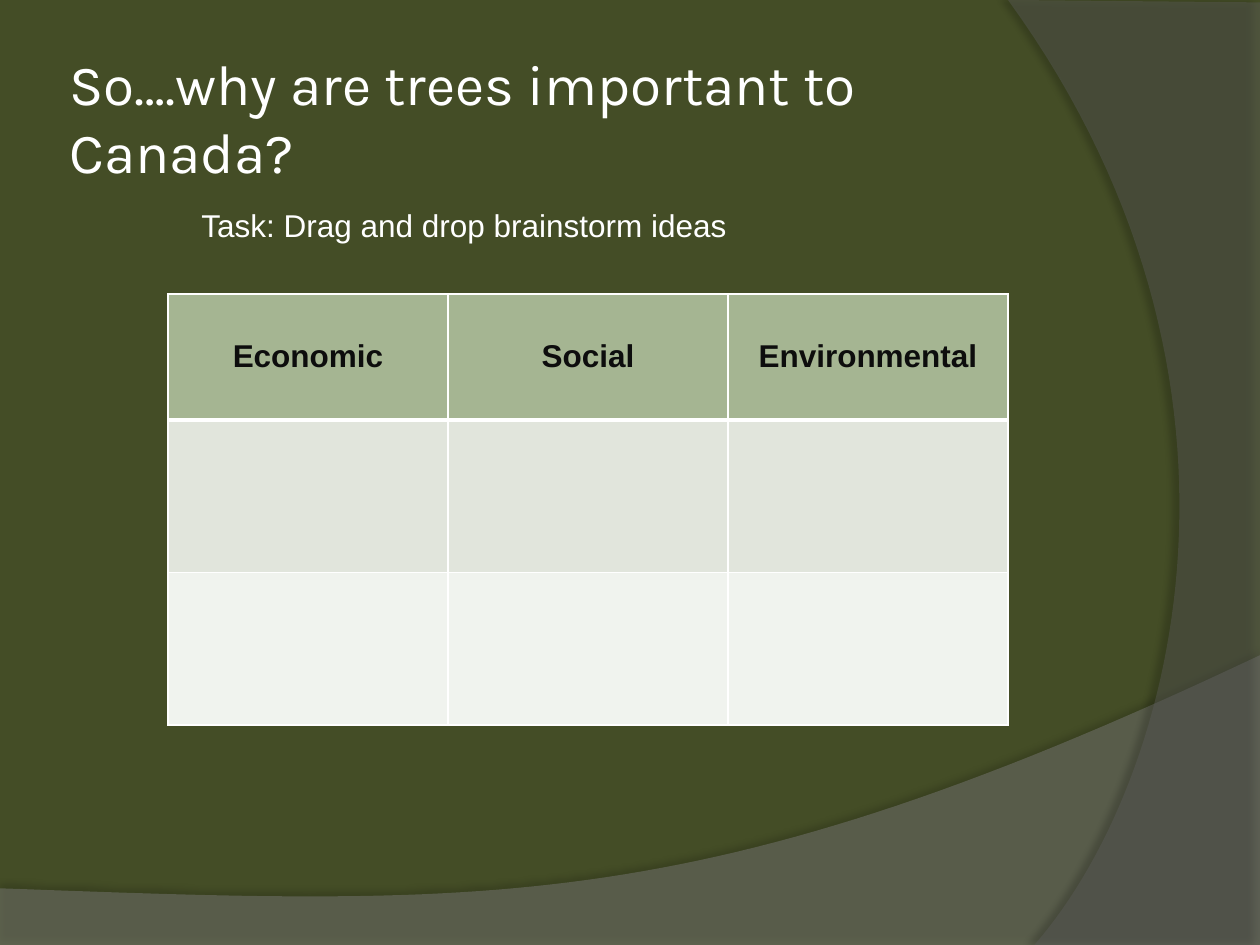
"""Build a slide about the importance of trees with a three-column sorting table."""
import dataclasses

import lxml.etree
import pptx
import pptx.dml.color
import pptx.enum.text
import pptx.oxml.ns
import pptx.slide
import pptx.util

Pt = pptx.util.Pt
RGBColor = pptx.dml.color.RGBColor
qn = pptx.oxml.ns.qn

BACKGROUND = RGBColor(0x44, 0x4D, 0x26)
BOTTOM_WAVE = RGBColor(0x7F, 0x7F, 0x7F)
SIDE_WAVE = RGBColor(0x5E, 0x5E, 0x5E)
WHITE = RGBColor(0xFF, 0xFF, 0xFF)
BLACK = RGBColor(0, 0, 0)
HEADER_TEXT = RGBColor(0x0D, 0x0D, 0x0D)
ROW_FILLS = [
    RGBColor(0xA5, 0xB5, 0x92),
    RGBColor(0xE1, 0xE5, 0xDC),
    RGBColor(0xF0, 0xF3, 0xEE),
]


def add_element(parent, tag, **attributes):
    values = {name: str(value) for name, value in attributes.items()}
    return lxml.etree.SubElement(parent, qn(tag), values)


def curve(start, control_1, control_2, end, steps=60):
    points = []
    for step in range(1, steps + 1):
        t = step / steps
        weights = ((1 - t) ** 3, 3 * t * (1 - t) ** 2, 3 * t**2 * (1 - t), t**3)
        corners = (start, control_1, control_2, end)
        points.append(tuple(
            sum(weight * corner[axis] for weight, corner in zip(weights, corners))
            for axis in (0, 1)
        ))
    return points


@dataclasses.dataclass
class SlideBuilder:
    slide: pptx.slide.Slide
    title_font: str = "Karla"
    body_font: str = "Arial"
    body_size: float = 18

    def style(self, text_frame, font_name, size, color, bold=False):
        for paragraph in text_frame.paragraphs:
            for run in paragraph.runs:
                run.font.name = font_name
                run.font.size = Pt(size)
                run.font.bold = bold
                run.font.color.rgb = color

    def background(self, color):
        self.slide.background.fill.solid()
        self.slide.background.fill.fore_color.rgb = color

    def wave(self, points, color, opacity, shadow_opacity, distance, direction):
        outline = [(Pt(x), Pt(y)) for x, y in points]
        builder = self.slide.shapes.build_freeform(*outline[0])
        builder.add_line_segments(outline[1:], close=True)
        shape = builder.convert_to_shape()
        shape.fill.solid()
        shape.fill.fore_color.rgb = color
        shape.line.fill.background()
        shape.shadow.inherit = False
        properties = shape.element.spPr
        fill_color = properties.find(qn("a:solidFill"))[0]
        add_element(fill_color, "a:alpha", val=opacity * 1000)
        shadow = add_element(
            properties.find(qn("a:effectLst")), "a:outerShdw", blurRad=Pt(4),
            dist=Pt(distance), dir=direction * 60000, algn="ctr", rotWithShape=0,
        )
        shadow_color = add_element(shadow, "a:srgbClr", val=BLACK)
        add_element(shadow_color, "a:alpha", val=shadow_opacity * 1000)

    def title(self, text, left, top, width, height):
        title = self.slide.shapes.title
        title.left, title.top = Pt(left), Pt(top)
        title.width, title.height = Pt(width), Pt(height)
        frame = title.text_frame
        frame.text = text
        frame.word_wrap = True
        frame.auto_size = pptx.enum.text.MSO_AUTO_SIZE.NONE
        frame.vertical_anchor = pptx.enum.text.MSO_ANCHOR.MIDDLE
        frame.margin_left = frame.margin_right = Pt(3.6)
        frame.margin_top = frame.margin_bottom = Pt(3.6)
        frame.paragraphs[0].alignment = pptx.enum.text.PP_ALIGN.LEFT
        self.style(frame, self.title_font, 32.4, WHITE)
        title.element.getparent().append(title.element)

    def table(self, rows, left, top, column_width, row_heights):
        columns = len(rows[0])
        table = self.slide.shapes.add_table(
            len(rows), columns, Pt(left), Pt(top),
            Pt(column_width * columns), Pt(sum(row_heights)),
        ).table
        table.horz_banding = False
        for column in table.columns:
            column.width = Pt(column_width)
        for row_index, texts in enumerate(rows):
            table.rows[row_index].height = Pt(row_heights[row_index])
            for column_index, text in enumerate(texts):
                self.cell(table.cell(row_index, column_index), text, row_index)

    def cell(self, cell, text, row_index):
        cell.fill.solid()
        cell.fill.fore_color.rgb = ROW_FILLS[row_index]
        if text:
            cell.text_frame.text = text
            cell.vertical_anchor = pptx.enum.text.MSO_ANCHOR.MIDDLE
            cell.text_frame.paragraphs[0].alignment = pptx.enum.text.PP_ALIGN.CENTER
            self.style(cell.text_frame, self.body_font, self.body_size, HEADER_TEXT, True)
        widths = {
            "a:lnL": 1,
            "a:lnR": 1,
            "a:lnT": 3 if row_index == 1 else 1,
            "a:lnB": 3 if row_index == 0 else 1,
        }
        properties = cell._tc.get_or_add_tcPr()
        for position, (tag, width) in enumerate(widths.items()):
            border = add_element(properties, tag, w=Pt(width))
            add_element(add_element(border, "a:solidFill"), "a:srgbClr", val=WHITE)
            properties.insert(position, border)

    def label(self, text, left, top, width, height):
        box = self.slide.shapes.add_textbox(Pt(left), Pt(top), Pt(width), Pt(height))
        frame = box.text_frame
        frame.text = text
        frame.word_wrap = False
        frame.auto_size = pptx.enum.text.MSO_AUTO_SIZE.SHAPE_TO_FIT_TEXT
        self.style(frame, self.body_font, self.body_size, WHITE)


presentation = pptx.Presentation()
presentation.slide_width, presentation.slide_height = Pt(720), Pt(540)
builder = SlideBuilder(presentation.slides.add_slide(presentation.slide_layouts[5]))
builder.background(BACKGROUND)
builder.wave(
    [(0, 507.6), (0, 540.7), (720, 540.7), (720, 374.4)]
    + curve((720, 374.4), (402.5, 524.9), (281.5, 517.7), (0, 507.6)),
    BOTTOM_WAVE, 45, shadow_opacity=35, distance=3.5, direction=270,
)
builder.wave(
    [(720, 1.4), (720, 540), (591.1, 540)]
    + curve((591.1, 540), (673.2, 445.7), (733, 216), (576, 0)),
    SIDE_WAVE, 40, shadow_opacity=45, distance=4, direction=180,
)
builder.title("So….why are trees important to Canada?", 36, 21.6, 588, 90)
builder.table(
    [["Economic", "Social", "Environmental"], [""] * 3, [""] * 3],
    left=96, top=168, column_width=160, row_heights=[72, 87.2, 87.2],
)
builder.label("Task: Drag and drop brainstorm ideas", 108, 114, 317.5, 29)
presentation.save("out.pptx")
